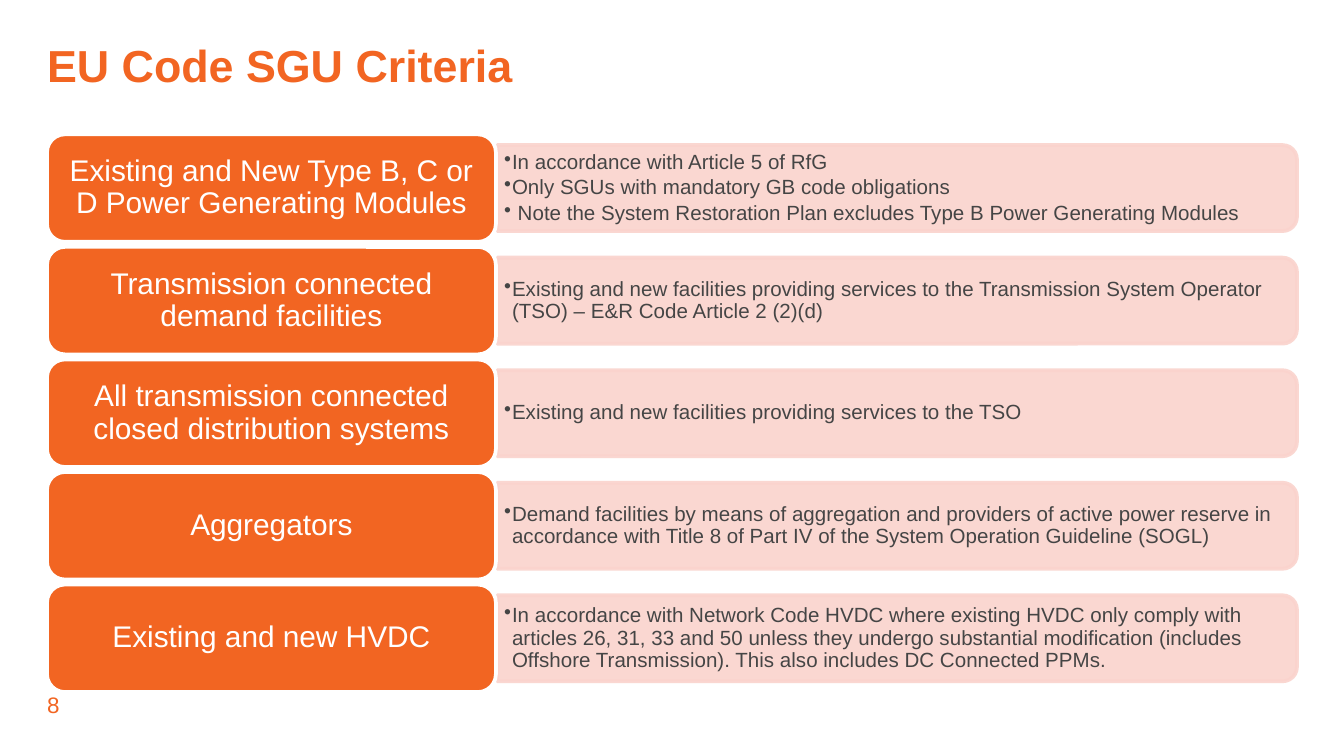
from lxml.etree import SubElement
from pptx import Presentation
from pptx.dml.color import RGBColor
from pptx.enum.shapes import MSO_SHAPE
from pptx.enum.text import MSO_ANCHOR, MSO_AUTO_SIZE, PP_ALIGN
from pptx.oxml.ns import qn
from pptx.util import Inches, Pt

TITLE = "EU Code SGU Criteria"
PAGE_NUMBER = "8"
CRITERIA = [
    ("Existing and New Type B, C or D Power Generating Modules", [
        "In accordance with Article 5 of RfG",
        "Only SGUs with mandatory GB code obligations",
        " Note the System Restoration Plan excludes Type B Power Generating Modules",
    ]),
    ("Transmission connected demand facilities", [
        "Existing and new facilities providing services to the Transmission System "
        "Operator (TSO) – E&R Code Article 2 (2)(d)",
    ]),
    ("All transmission connected closed distribution systems", [
        "Existing and new facilities providing services to the TSO",
    ]),
    ("Aggregators", [
        "Demand facilities by means of aggregation and providers of active power "
        "reserve in accordance with Title 8 of Part IV of the System Operation "
        "Guideline (SOGL)",
    ]),
    ("Existing and new HVDC", [
        "In accordance with Network Code HVDC where existing HVDC only comply with "
        "articles 26, 31, 33 and 50 unless they undergo substantial modification "
        "(includes Offshore Transmission). This also includes DC Connected PPMs.",
    ]),
]

ORANGE, PINK, GREY, WHITE = "F26522", "FAD3CD", "454545", "FFFFFF"
PAGE_WIDTH = 10
PAGE_HEIGHT = PAGE_WIDTH * 9 / 16
LEFT, TOP, LAST_TOP = 0.35, 1, 4.35
LABEL_WIDTH, LABEL_HEIGHT = 3.34, 0.8
PANEL_WIDTH, PANEL_HEIGHT = 5.95, 0.64
DETAIL_WIDTH, DETAIL_HEIGHT = 5.92, 0.58
PITCH = (LAST_TOP - TOP) / (len(CRITERIA) - 1)

TITLE_FONT = {"size": 24, "color": ORANGE, "bold": True}
NUMBER_FONT = {"size": 12, "color": ORANGE}
LABEL_FONT = {"size": 16, "color": WHITE}
DETAIL_FONT = {"size": 11, "color": GREY}


def rgb(value):
    return RGBColor.from_string(value)


def write(box, lines, font, margins=(0, 0), anchor=MSO_ANCHOR.TOP, bullet=False, **layout):
    """Fill a shape with one formatted paragraph per line."""
    frame = box.text_frame
    frame.word_wrap = True
    frame.auto_size = MSO_AUTO_SIZE.NONE
    frame.vertical_anchor = anchor
    frame.margin_left = frame.margin_right = Inches(margins[0])
    frame.margin_top = frame.margin_bottom = Inches(margins[1])
    for index, line in enumerate(lines):
        para = frame.add_paragraph() if index else frame.paragraphs[0]
        if bullet:
            add_bullet(para)
        for name, value in layout.items():
            setattr(para, name, value)
        span = para.add_run()
        span.text = line
        span.font.name = "Arial"
        span.font.size = Pt(font["size"])
        span.font.bold = font.get("bold", False)
        span.font.color.rgb = rgb(font["color"])


def add_bullet(para):
    properties = para._p.get_or_add_pPr()
    properties.set("marL", str(Inches(0.06)))
    properties.set("indent", str(-Inches(0.06)))
    SubElement(properties, qn("a:buChar")).set("char", "•")


def add_block(shapes, kind, place, fill, line, opacity=None):
    block = shapes.add_shape(kind, *map(Inches, place))
    block.shadow.inherit = False
    block.fill.solid()
    block.fill.fore_color.rgb = rgb(fill)
    block.line.color.rgb = rgb(line)
    block.line.width = Pt(2)
    if opacity:
        for color in block._element.spPr.iter(qn("a:srgbClr")):
            SubElement(color, qn("a:alpha")).set("val", str(opacity * 1000))
    return block


def add_criterion(shapes, top, label, details):
    middle = top + LABEL_HEIGHT / 2
    panel_left = LEFT + LABEL_WIDTH + 0.01
    # The panel stands upright before its quarter turn, around the same centre.
    panel = add_block(
        shapes, MSO_SHAPE.ROUND_2_SAME_RECTANGLE,
        (panel_left + (PANEL_WIDTH - PANEL_HEIGHT) / 2, middle - PANEL_WIDTH / 2,
         PANEL_HEIGHT, PANEL_WIDTH),
        PINK, PINK, opacity=90)
    panel.rotation = 90

    place = (panel_left, middle - DETAIL_HEIGHT / 2, DETAIL_WIDTH, DETAIL_HEIGHT)
    detail_box = shapes.add_textbox(*map(Inches, place))
    write(detail_box, details, DETAIL_FONT, (0.05, 0.02), MSO_ANCHOR.MIDDLE,
          bullet=True, line_spacing=0.9, space_after=Pt(1.9))

    label_box = add_block(shapes, MSO_SHAPE.ROUNDED_RECTANGLE,
                          (LEFT, top, LABEL_WIDTH, LABEL_HEIGHT), ORANGE, WHITE)
    write(label_box, [label], LABEL_FONT, (0.07, 0.03), MSO_ANCHOR.MIDDLE,
          alignment=PP_ALIGN.CENTER, line_spacing=0.9)


def main():
    deck = Presentation()
    deck.slide_width, deck.slide_height = Inches(PAGE_WIDTH), Inches(PAGE_HEIGHT)
    page = deck.slides.add_slide(deck.slide_layouts[5])

    title = page.shapes.title
    title.left, title.top, title.width, title.height = map(Inches, (LEFT, 0.36, 9.29, 0.32))
    write(title, [TITLE], TITLE_FONT, alignment=PP_ALIGN.LEFT, line_spacing=0.8)

    number_box = page.shapes.add_textbox(*map(Inches, (LEFT, 5.14, 0.91, 0.2)))
    write(number_box, [PAGE_NUMBER], NUMBER_FONT)

    diagram = page.shapes.add_group_shape()
    for row, (label, details) in enumerate(CRITERIA):
        add_criterion(diagram.shapes, TOP + row * PITCH, label, details)

    deck.save("out.pptx")


if __name__ == "__main__":
    main()
